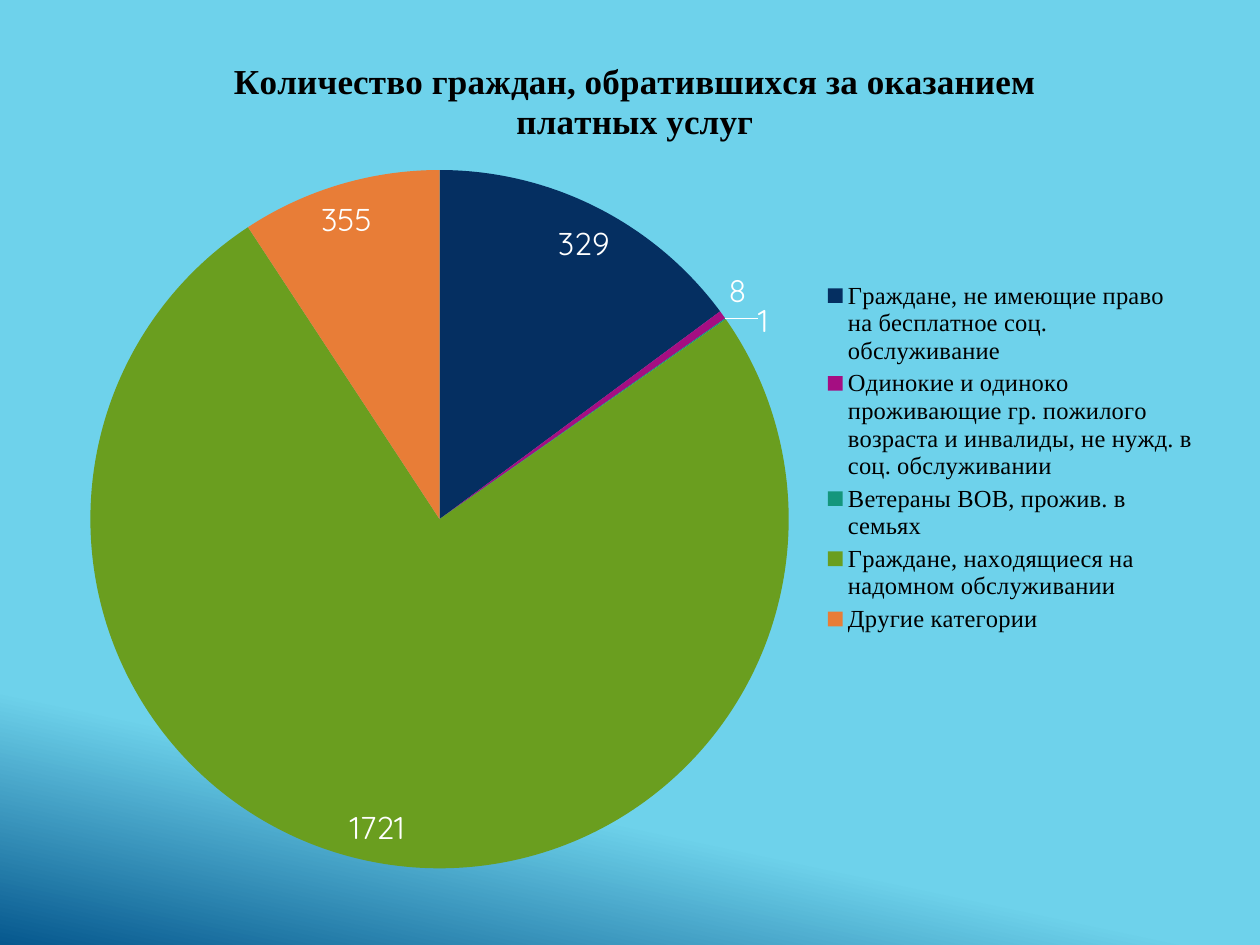
from lxml import etree
from pptx import Presentation
from pptx.chart.data import CategoryChartData
from pptx.dml.color import RGBColor
from pptx.enum.chart import XL_CHART_TYPE, XL_LABEL_POSITION, XL_LEGEND_POSITION
from pptx.oxml.ns import qn
from pptx.util import Inches, Pt

CATEGORIES = {
    "Граждане, не имеющие право на бесплатное соц. обслуживание": (299, "052F61", "329"),
    "Одинокие и одиноко проживающие гр. пожилого возраста и инвалиды, "
    "не нужд. в соц. обслуживании": (8, "A50E82", None),
    "Ветераны ВОВ, прожив. в семьях": (1, "14967C", None),
    "Граждане, находящиеся на надомном обслуживании": (1519, "6A9E1F", "1721"),
    "Другие категории": (186, "E87D37", "355"),
}


def color(value):
    """Return the colour for a hex string."""
    return RGBColor.from_string(value)


def set_font(font, name, size, value, bold=False):
    """Apply a typeface, size, colour and weight to a font."""
    font.name = name
    font.size = Pt(size)
    font.bold = bold
    font.color.rgb = color(value)


def paint_background(slide):
    """Fill the slide with a gradient that darkens at the lower left."""
    fill = slide.background.fill
    fill.gradient()
    fill.gradient_angle = 258
    for stop, (position, value) in zip(fill.gradient_stops, [(0.79, "6ED2EB"), (1, "06588E")]):
        stop.position = position
        stop.color.rgb = color(value)


def style_slices(plot):
    """Colour the slices and write their labels."""
    plot.vary_by_categories = True
    series = plot.series[0]
    labels = series.data_labels
    labels.show_value = True
    labels.position = XL_LABEL_POSITION.BEST_FIT
    set_font(labels.font, "Quicksand", 18, "FFFFFF")
    leader_lines = labels._element.find(qn("c:showLeaderLines"))
    if leader_lines is None:
        leader_lines = etree.SubElement(labels._element, qn("c:showLeaderLines"))
    leader_lines.set("val", "1")
    for index, (_, value, text) in enumerate(CATEGORIES.values()):
        point = series.points[index]
        point.format.fill.solid()
        point.format.fill.fore_color.rgb = color(value)
        point.format.line.fill.background()
        if text:
            label = point.data_label
            run = label.text_frame.paragraphs[0].add_run()
            run.text = text
            set_font(run.font, "Quicksand", 18, "FFFFFF")
            label.position = XL_LABEL_POSITION.BEST_FIT


def add_pie(slide, left, top, width, height):
    """Add the pie chart with its title and legend in the given box."""
    data = CategoryChartData()
    data.categories = list(CATEGORIES)
    data.add_series("Series 1", [value for value, _, _ in CATEGORIES.values()])
    chart = slide.shapes.add_chart(XL_CHART_TYPE.PIE, left, top, width, height, data).chart
    set_font(chart.font, "Quicksand", 18, "FFFFFF")
    chart.has_title = True
    paragraph = chart.chart_title.text_frame.paragraphs[0]
    paragraph.text = "Количество граждан, обратившихся за оказанием платных услуг"
    set_font(paragraph.font, "Times New Roman", 20, "000000", bold=True)
    set_font(paragraph.runs[0].font, "Times New Roman", 20, "000000", bold=True)
    chart.chart_title.include_in_layout = False
    chart.has_legend = True
    legend = chart.legend
    legend.position = XL_LEGEND_POSITION.RIGHT
    legend.include_in_layout = False
    set_font(legend.font, "Times New Roman", 14, "000000")
    style_slices(chart.plots[0])


def main():
    """Build and save the presentation."""
    presentation = Presentation()
    presentation.slide_width = Inches(10)
    presentation.slide_height = Inches(7.5)
    slide = presentation.slides.add_slide(presentation.slide_layouts[6])
    paint_background(slide)
    add_pie(slide, Inches(0.47), Inches(0.23), Inches(9.14), Inches(6.8))
    presentation.save("out.pptx")


if __name__ == "__main__":
    main()
